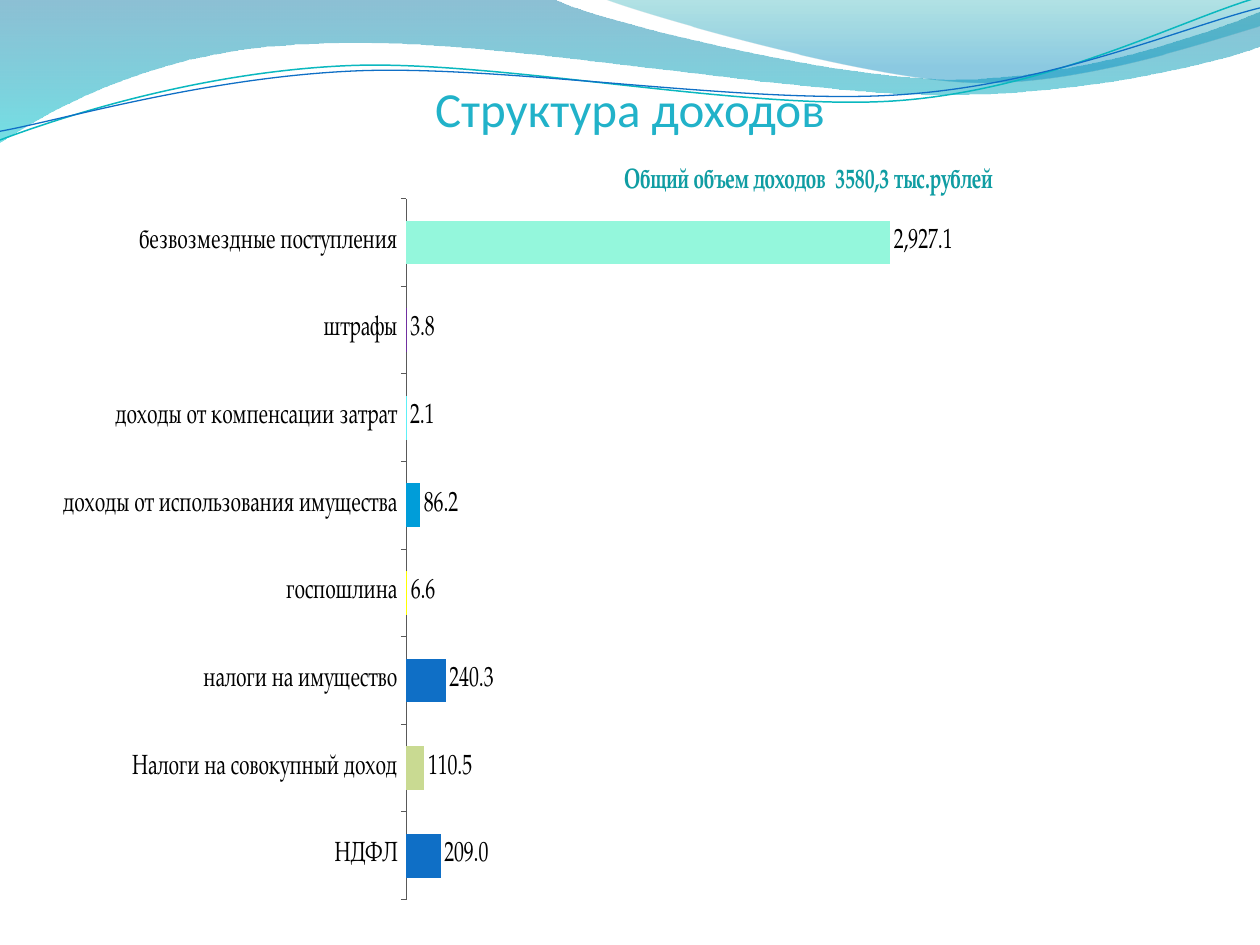
"""Build the income structure slide: wave header, title and bar chart."""
from dataclasses import dataclass

from lxml import etree
from pptx import Presentation
from pptx import util as u
from pptx.chart.data import CategoryChartData
from pptx.dml.color import RGBColor
from pptx.enum import chart as charts, text
from pptx.oxml import ns

Point = tuple[float, float]
CHART_FONT = "TeX Gyre Pagella"
CHART_SIZE = 15.9


@dataclass
class Stop:
    position: float
    colour: str
    opacity: int


@dataclass
class Wave:
    start: Point
    segments: list[list[Point]]
    stops: tuple[Stop, ...] = ()
    line: str = ""
    width: float = 0


@dataclass
class Income:
    name: str
    value: float
    colour: str


WAVES = [
    Wave((0, 0), [
        [(317, -0.5)],
        [(343, 12), (478, 45), (546, 45)],
        [(614, 45), (690, 19), (720, 6.5)],
        [(720.5, 26)],
        [(708, 32), (626, 54.5), (537, 54)],
        [(448, 54), (275, 20), (185, 24.5)],
        [(93, 26), (33, 60), (-0.5, 81.5)],
    ], (Stop(0, "0074A1", 45), Stop(1, "00C6CF", 55))),
    Wave((345, -0.5), [
        [(366, 8), (491, 44.5), (554, 47)],
        [(616, 49.5), (692, 23), (720, 15)],
        [(720, 0)],
    ], (Stop(0, "00A1A9", 30), Stop(0.8, "008BBF", 45))),
    Wave((0, 80), [
        [(34.5, 67), (114, 41), (199.5, 37.5)],
        [(284.5, 34), (427, 64), (513.5, 57.5)],
        [(600, 51), (675.5, 11), (719, -1.5)],
    ], line="0AB8BF", width=0.85),
    Wave((0, 75), [
        [(34, 69), (118, 44), (204, 40.5)],
        [(290, 37), (430, 60.5), (516, 54)],
        [(602, 48), (677.5, 15), (720, 4.5)],
    ], line="0F6FC6", width=0.75),
]

INCOMES = [
    Income("НДФЛ", 209, "0F6FC6"),
    Income("Налоги на совокупный доход", 110.5, "C9DA92"),
    Income("налоги на имущество", 240.3, "0F6FC6"),
    Income("госпошлина", 6.6, "FFFF00"),
    Income("доходы от использования имущества", 86.2, "009DD9"),
    Income("доходы от компенсации затрат", 2.1, "5EF0F7"),
    Income("штрафы", 3.8, "7030A0"),
    Income("безвозмездные поступления", 2927.1, "94F7DC"),
]


def colour(value: str) -> RGBColor:
    """Turn a hex string into a colour."""
    return RGBColor.from_string(value)


def style_font(font, name: str, size: float, value: str, bold: bool = False) -> None:
    """Set the face, size, colour and weight of a font."""
    font.name, font.size, font.bold = name, u.Pt(size), bold
    font.color.rgb = colour(value)


def bend(shape, segments: list[list[Point]]) -> None:
    """Turn the straight sides that have control points into cubic curves."""
    sides = list(shape.element.spPr.iter(ns.qn("a:lnTo")))
    for side, segment in zip(sides, segments):
        if len(segment) < 3:
            continue
        cubic = etree.Element(ns.qn("a:cubicBezTo"))
        for x, y in segment:
            etree.SubElement(cubic, ns.qn("a:pt"), x=str(u.Pt(x) - shape.left),
                             y=str(u.Pt(y) - shape.top))
        side.getparent().replace(side, cubic)


def draw_wave(page, wave: Wave) -> None:
    """Draw a gradient wave or a wave line."""
    corners = [(u.Pt(x), u.Pt(y)) for x, y in
               [wave.start, *(segment[-1] for segment in wave.segments)]]
    builder = page.shapes.build_freeform(*corners[0])
    builder.add_line_segments(corners[1:], close=bool(wave.stops))
    shape = builder.convert_to_shape()
    bend(shape, wave.segments)
    shape.shadow.inherit = False
    if not wave.stops:
        shape.fill.background()
        shape.line.color.rgb = colour(wave.line)
        shape.line.width = u.Pt(wave.width)
        return
    shape.line.fill.background()
    shape.fill.gradient()
    shape.fill.gradient_angle = 270
    for target, stop in zip(shape.fill.gradient_stops, wave.stops):
        target.position = stop.position
        target.color.rgb = colour(stop.colour)
    tints = shape.element.spPr.iter(ns.qn("a:srgbClr"))
    for tint, stop in zip(list(tints), wave.stops):
        etree.SubElement(tint, ns.qn("a:alpha"), val=str(stop.opacity * 1000))


def place_plot(area, **percents: float) -> None:
    """Place the inner plot area by percentages of the chart."""
    old = area.find(ns.qn("c:layout"))
    if old is not None:
        area.remove(old)
    layout = etree.Element(ns.qn("c:layout"))
    manual = etree.SubElement(layout, ns.qn("c:manualLayout"))
    modes = {"layoutTarget": "inner", "xMode": "edge", "yMode": "edge"}
    places = {tag: round(value / 100, 4) for tag, value in percents.items()}
    for tag, value in (modes | places).items():
        etree.SubElement(manual, ns.qn(f"c:{tag}"), val=str(value))
    area.insert(0, layout)


def draw_title(page) -> None:
    """Draw the slide title."""
    box = page.shapes.add_textbox(u.Pt(36), u.Pt(21.6), u.Pt(648), u.Pt(57))
    frame = box.text_frame
    frame.word_wrap = True
    frame.vertical_anchor = text.MSO_ANCHOR.BOTTOM
    frame.margin_left = frame.margin_right = frame.margin_bottom = u.Pt(0)
    frame.text = "Структура доходов"
    para = frame.paragraphs[0]
    para.alignment = text.PP_ALIGN.CENTER
    style_font(para.runs[0].font, "Calibri", 28, "21B2C9")


def draw_chart(page) -> None:
    """Draw the bar chart of incomes."""
    data = CategoryChartData(number_format="#,##0.0")
    data.categories = [income.name for income in INCOMES]
    data.add_series("Series 1", [income.value for income in INCOMES])
    chart = page.shapes.add_chart(charts.XL_CHART_TYPE.BAR_CLUSTERED, u.Pt(36), u.Pt(78.5),
                                  u.Pt(661.5), u.Pt(461.5), data).chart
    style_font(chart.font, CHART_FONT, CHART_SIZE, "000000")
    chart.has_legend = False
    chart.has_title = True
    frame = chart.chart_title.text_frame
    frame.text = "Общий объем доходов  3580,3 тыс.рублей"
    style_font(frame.paragraphs[0].runs[0].font, CHART_FONT, CHART_SIZE, "109DA3", bold=True)
    chart.chart_title.include_in_layout = False

    axis = chart.category_axis
    axis.major_tick_mark = charts.XL_TICK_MARK.OUTSIDE
    axis.format.line.color.rgb = colour("595959")
    axis.format.line.width = u.Pt(0.75)
    scale = chart.value_axis
    scale.visible = scale.has_major_gridlines = False
    scale.minimum_scale, scale.maximum_scale, scale.major_unit = 0, 3100, 100

    plot = chart.plots[0]
    place_plot(plot._element.getparent(), x=1.2, y=7.6, w=62.2, h=86.8)
    plot.gap_width = 100
    plot.vary_by_categories = False
    plot.has_data_labels = True
    labels = plot.data_labels
    labels.show_value = True
    labels.number_format, labels.number_format_is_linked = "#,##0.0", False
    labels.position = charts.XL_LABEL_POSITION.OUTSIDE_END
    series = plot.series[0]
    series.invert_if_negative = False
    for index, income in enumerate(INCOMES):
        fill = series.points[index].format.fill
        fill.solid()
        fill.fore_color.rgb = colour(income.colour)


def main() -> None:
    """Build and save the deck."""
    deck = Presentation()
    deck.slide_width, deck.slide_height = u.Pt(720), u.Pt(540)
    page = deck.slides.add_slide(deck.slide_layouts[6])
    for wave in WAVES:
        draw_wave(page, wave)
    draw_title(page)
    draw_chart(page)
    deck.save("out.pptx")


if __name__ == "__main__":
    main()
